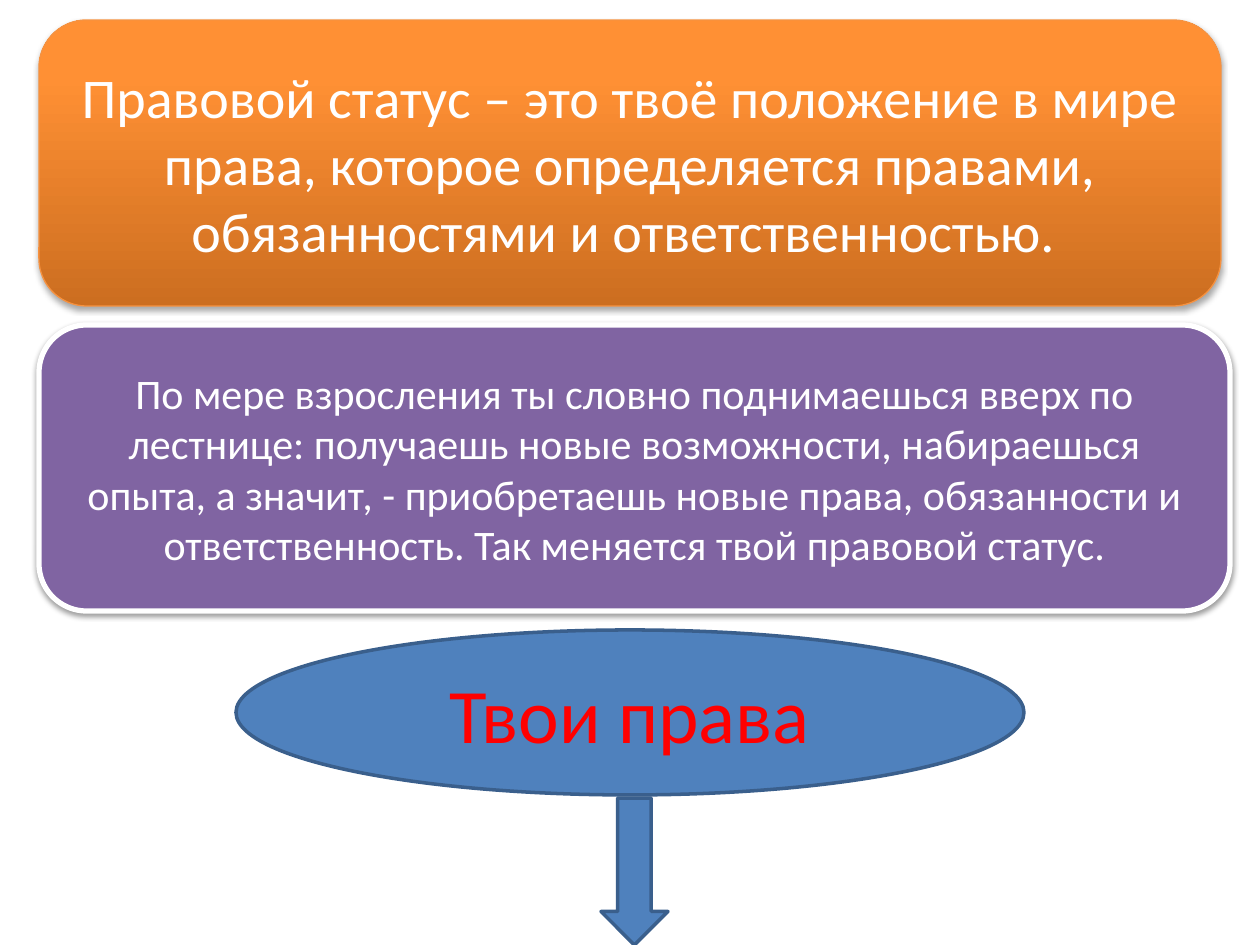
from copy import deepcopy

from lxml import etree
from pptx import Presentation
from pptx.dml.color import RGBColor
from pptx.enum.shapes import MSO_SHAPE
from pptx.enum.text import MSO_ANCHOR, PP_ALIGN
from pptx.oxml.ns import qn
from pptx.util import Emu, Pt

ROUNDED = MSO_SHAPE.ROUNDED_RECTANGLE
ELLIPSE = MSO_SHAPE.OVAL
DOWN_ARROW = MSO_SHAPE.DOWN_ARROW
MIDDLE = MSO_ANCHOR.MIDDLE
CENTER = PP_ALIGN.CENTER

WHITE = RGBColor(0xFF, 0xFF, 0xFF)
RED = RGBColor(0xFF, 0x00, 0x00)
PURPLE = RGBColor(0x80, 0x64, 0xA2)
BLUE = RGBColor(0x4F, 0x81, 0xBD)
DARK_BLUE = RGBColor(0x3A, 0x5F, 0x8C)
ORANGE = RGBColor(0xF6, 0x92, 0x40)
ORANGE_STOPS = [
    (0, RGBColor(0xCC, 0x6E, 0x20)),
    (0.8, RGBColor(0xFF, 0x90, 0x34)),
    (1, RGBColor(0xFF, 0x91, 0x36)),
]

EMU_PER_PX = 914400 / 126


def px(length):
    return Emu(round(length * EMU_PER_PX))


class Page:
    font = "Calibri"

    def __init__(self, slide):
        self.slide = slide

    def shape(self, kind, left, top, width, height, fill, line, weight):
        box = self.slide.shapes.add_shape(
            kind, px(left), px(top), px(width), px(height))
        box.shadow.inherit = False
        if isinstance(fill, list):
            self.gradient(box, fill)
        else:
            box.fill.solid()
            box.fill.fore_color.rgb = fill
        box.line.color.rgb = line
        box.line.width = Pt(weight)
        return box

    def gradient(self, box, stops):
        """Fill from bottom to top with three colour stops."""
        box.fill.gradient()
        box.fill.gradient_angle = 90
        stop_list = box._element.spPr.find(qn("a:gradFill")).find(qn("a:gsLst"))
        stop_list.insert(1, deepcopy(stop_list[0]))
        for stop, (position, color) in zip(box.fill.gradient_stops, stops):
            stop.position = position
            stop.color.rgb = color

    def shadow(self, box, distance, opacity):
        """Cast a soft black shadow straight down."""
        effects = box._element.spPr.find(qn("a:effectLst"))
        outer = etree.SubElement(
            effects, qn("a:outerShdw"), blurRad=str(Pt(3.1)),
            dist=str(Pt(distance)), dir="5400000", rotWithShape="0")
        color = etree.SubElement(outer, qn("a:srgbClr"), val="000000")
        etree.SubElement(color, qn("a:alpha"), val=str(opacity * 1000))

    def text(self, box, words, size, color):
        frame = box.text_frame
        frame.word_wrap = True
        frame.vertical_anchor = MIDDLE
        para = frame.paragraphs[0]
        para.text = words
        para.alignment = CENTER
        para.font.name = self.font
        para.font.size = Pt(size)
        para.font.color.rgb = color


def main():
    deck = Presentation()
    deck.slide_width, deck.slide_height = px(1260), px(945)
    page = Page(deck.slides.add_slide(deck.slide_layouts[6]))

    # Definition
    definition = page.shape(ROUNDED, 39, 20, 1182, 286, ORANGE_STOPS, ORANGE, 0.75)
    page.shadow(definition, 1.8, 35)
    page.text(definition, "Правовой статус – это твоё положение в мире права, "
              "которое определяется правами, обязанностями и "
              "ответственностью. ", 32, WHITE)

    # Explanation
    explanation = page.shape(ROUNDED, 39, 325, 1191, 286, PURPLE, WHITE, 3)
    page.shadow(explanation, 1.6, 38)
    page.text(explanation, "По мере взросления ты словно поднимаешься вверх по "
              "лестнице: получаешь новые возможности, набираешься опыта, "
              "а значит, - приобретаешь новые права, обязанности и "
              "ответственность. Так меняется твой правовой статус.", 24, WHITE)

    # Rights, with the arrow leading on
    rights = page.shape(ELLIPSE, 236, 630, 788, 165, BLUE, DARK_BLUE, 2)
    page.text(rights, "Твои права", 44, RED)
    page.shape(DOWN_ARROW, 601, 798, 67, 147, BLUE, DARK_BLUE, 2)

    deck.save("out.pptx")


if __name__ == "__main__":
    main()
